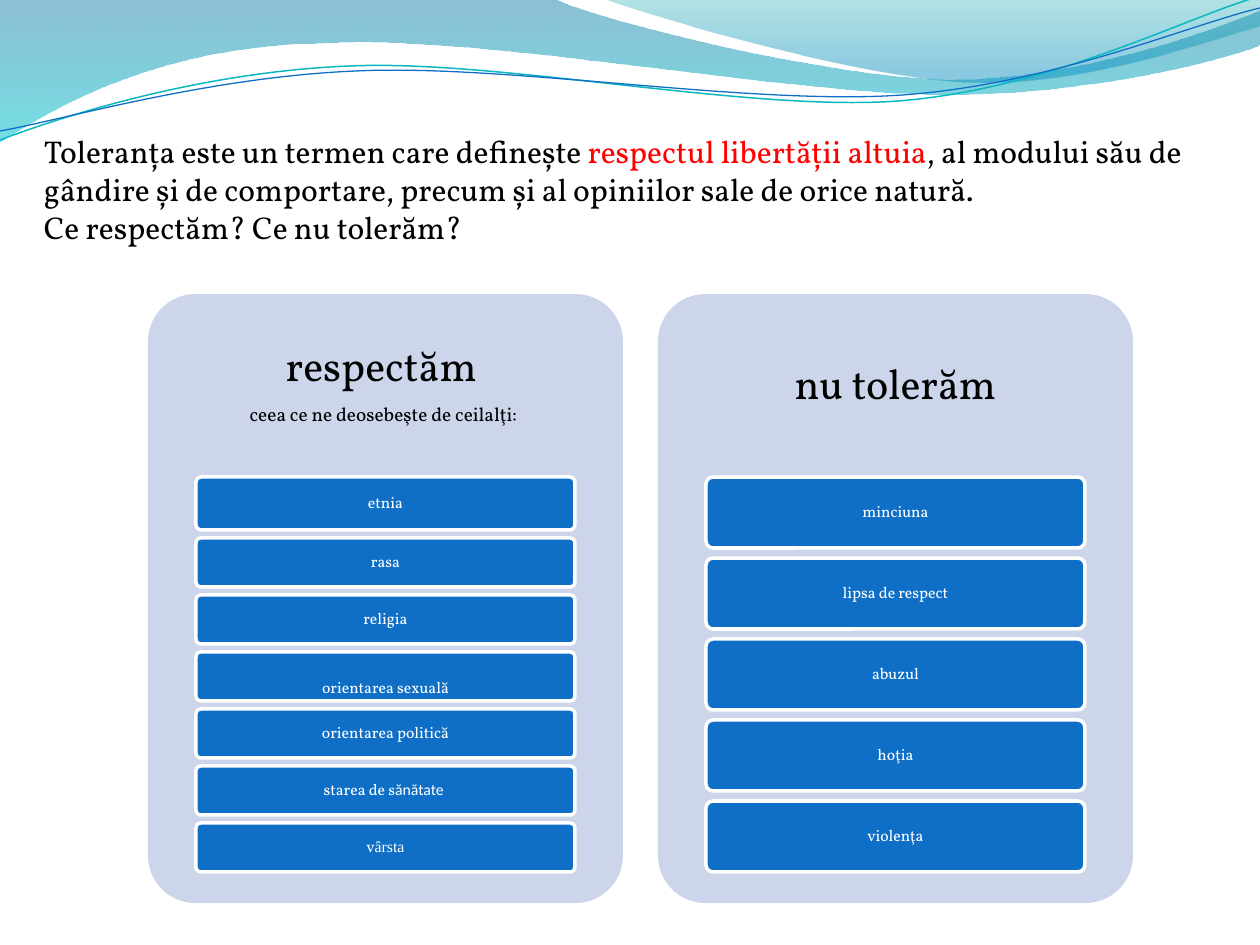
from pptx import Presentation
from pptx.dml.color import RGBColor
from pptx.enum.shapes import MSO_SHAPE
from pptx.enum.text import MSO_ANCHOR, PP_ALIGN
from pptx.oxml.ns import qn
from pptx.util import Pt
from lxml.etree import SubElement

EMU_PER_PX = 914400 / 126
FONT = "Vollkorn"
COLORS = {
    "text": "000000", "accent": "FF0000", "white": "FFFFFF",
    "panel": "CCD5EA", "item": "0F6FC6", "teal_line": "0AB8BF",
    "deep": "0074A1", "aqua": "00C6CF", "green": "00A1A9", "blue": "008BBF",
}


def px(n):
    return round(n * EMU_PER_PX)


def rgb(name):
    return RGBColor.from_string(COLORS[name])


def add_run(p, text, size, color, font=FONT):
    r = p.add_run()
    r.text = text
    r.font.size = Pt(size)
    r.font.name = font
    r.font.color.rgb = rgb(color)


def set_frame(tf, left, top, right, bottom, anchor=MSO_ANCHOR.MIDDLE):
    tf.word_wrap = True
    tf.margin_left, tf.margin_top = px(left), px(top)
    tf.margin_right, tf.margin_bottom = px(right), px(bottom)
    tf.vertical_anchor = anchor


def center(p, space_after=0):
    p.alignment = PP_ALIGN.CENTER
    p.line_spacing = 0.9
    p.space_after = Pt(space_after)


def add_round_rect(s, x, y, w, h, fill):
    sp = s.shapes.add_shape(MSO_SHAPE.ROUNDED_RECTANGLE, px(x), px(y), px(w), px(h))
    sp.adjustments[0] = 0.1
    sp.shadow.inherit = False
    sp.fill.solid()
    sp.fill.fore_color.rgb = rgb(fill)
    sp.line.fill.background()
    return sp


def add_outline(s, start, segments, close):
    """Freeform of lines (one point) and cubic curves (three points)."""
    points = [(px(x), px(y)) for seg in segments for x, y in seg]
    fb = s.shapes.build_freeform(px(start[0]), px(start[1]), scale=1.0)
    fb.add_line_segments(points, close=close)
    sp = fb.convert_to_shape()
    sp.shadow.inherit = False
    nodes = iter(list(sp._element.spPr.iter(qn("a:lnTo"))))
    for seg in segments:
        first, *others = [next(nodes) for _ in seg]
        if others:
            first.tag = qn("a:cubicBezTo")
            for node in others:
                first.append(node[0])
                node.getparent().remove(node)
    return sp


def add_wave(s, start, segments, stops):
    """Closed wave with a downward gradient of (position, colour, opacity) stops."""
    sp = add_outline(s, start, segments, close=True)
    sp.line.fill.background()
    sp.fill.gradient()
    sp.fill.gradient_angle = 270
    for stop, (position, color, _) in zip(sp.fill.gradient_stops, stops):
        stop.position = position
        stop.color.rgb = rgb(color)
    for clr, (_, _, opacity) in zip(sp._element.spPr.iter(qn("a:srgbClr")), stops):
        SubElement(clr, qn("a:alpha")).set("val", str(opacity * 1000))


def add_wave_line(s, start, segments, color, width):
    sp = add_outline(s, start, segments, close=False)
    sp.fill.background()
    sp.line.color.rgb = rgb(color)
    sp.line.width = Pt(width)


def add_header_waves(s):
    add_wave(s, (0, 0), [
        [(554, -1)],
        [(600, 21), (837, 79), (955, 79)],
        [(1074, 79), (1207, 33), (1260, 11)],
        [(1261, 45)],
        [(1239, 55), (1096, 96), (940, 94)],
        [(784, 94), (481, 35), (324, 43)],
        [(163, 45), (58, 105), (-1, 142)],
    ], [(0, "deep", 45), (1, "aqua", 55)])
    add_wave(s, (604, -1), [
        [(641, 14), (859, 78), (969, 82)],
        [(1079, 87), (1211, 40), (1260, 26)],
        [(1260, 0)],
    ], [(0, "green", 30), (0.8, "blue", 45)])
    add_wave_line(s, (0, 140), [
        [(60, 117), (199, 72), (349, 66)],
        [(498, 59), (747, 112), (898, 101)],
        [(1050, 89), (1182, 19), (1257, -3)],
    ], "teal_line", 0.85)
    add_wave_line(s, (0, 131), [
        [(59, 121), (207, 77), (357, 71)],
        [(508, 64), (752, 106), (903, 95)],
        [(1053, 84), (1186, 26), (1260, 8)],
    ], "item", 0.75)


def add_definition(s, x, y, w, h):
    tf = s.shapes.add_textbox(px(x), px(y), px(w), px(h)).text_frame
    set_frame(tf, 12, 6, 12, 6, MSO_ANCHOR.TOP)
    p = tf.paragraphs[0]
    add_run(p, "Toleranța este un termen care definește ", 18, "text")
    add_run(p, "respectul libertății altuia", 18, "accent")
    add_run(p, ", al modului său de gândire și de comportare, precum și al "
               "opiniilor sale de orice natură.", 18, "text")
    add_run(tf.add_paragraph(), "Ce respectăm? Ce nu tolerăm?", 18, "text")


def add_item(s, x, y, w, h, runs, drop):
    """Item box; drop lowers its text by that many px."""
    sp = add_round_rect(s, x, y, w, h, "item")
    sp.line.color.rgb = rgb("white")
    sp.line.width = Pt(2)
    pad = 0 if drop else 3
    set_frame(sp.text_frame, 4, pad + 2 * drop, 4, pad)
    p = sp.text_frame.paragraphs[0]
    center(p)
    for text, font in runs:
        add_run(p, text, 9, "white", font)


def add_panel(s, x, y, w, h, headings, items, first_h, gap):
    """Panel with (text, size) headings above items that share the height left."""
    add_round_rect(s, x, y, w, h, "panel")
    head_h, side, foot = 183, 48, 31
    tf = s.shapes.add_textbox(px(x), px(y), px(w), px(head_h)).text_frame
    set_frame(tf, 13, 13, 13, 13)
    for i, (text, size) in enumerate(headings):
        p = tf.add_paragraph() if i else tf.paragraphs[0]
        center(p, size / 3)
        add_run(p, text, size, "text")

    rest = len(items) - 1
    other_h = (h - head_h - foot - first_h - gap * rest) / rest
    top = y + head_h
    for i, (runs, drop) in enumerate(items):
        item_h = other_h if i else first_h
        add_item(s, x + side, top, w - 2 * side, item_h, runs, drop)
        top += item_h + gap


def plain(text, drop=0):
    return [(text, FONT)], drop


def main():
    prs = Presentation()
    prs.slide_width, prs.slide_height = px(1260), px(945)
    s = prs.slides.add_slide(prs.slide_layouts[6])
    add_header_waves(s)
    add_definition(s, 32, 126, 1197, 165)
    respected = [
        plain("etnia"), plain("rasa"), plain("religia"),
        plain("orientarea sexuală", drop=12), plain("orientarea politică"),
        ([("starea de s", FONT), ("ănătate ", "Calibri")], 0),
        ([("v", FONT), ("ȃrsta", "Times New Roman")], 0),
    ]
    rejected = [plain(t) for t in
                ("minciuna", "lipsa de respect", "abuzul", "hoţia", "violenţa")]
    add_panel(s, 148, 294, 475, 609,
              [("respectăm ", 24), ("ceea ce ne deosebeşte de ceilalţi: ", 11)],
              respected, first_h=53, gap=8)
    add_panel(s, 658, 294, 475, 609, [("nu tolerăm", 24)],
              rejected, first_h=71, gap=10)
    prs.save("out.pptx")


if __name__ == "__main__":
    main()
